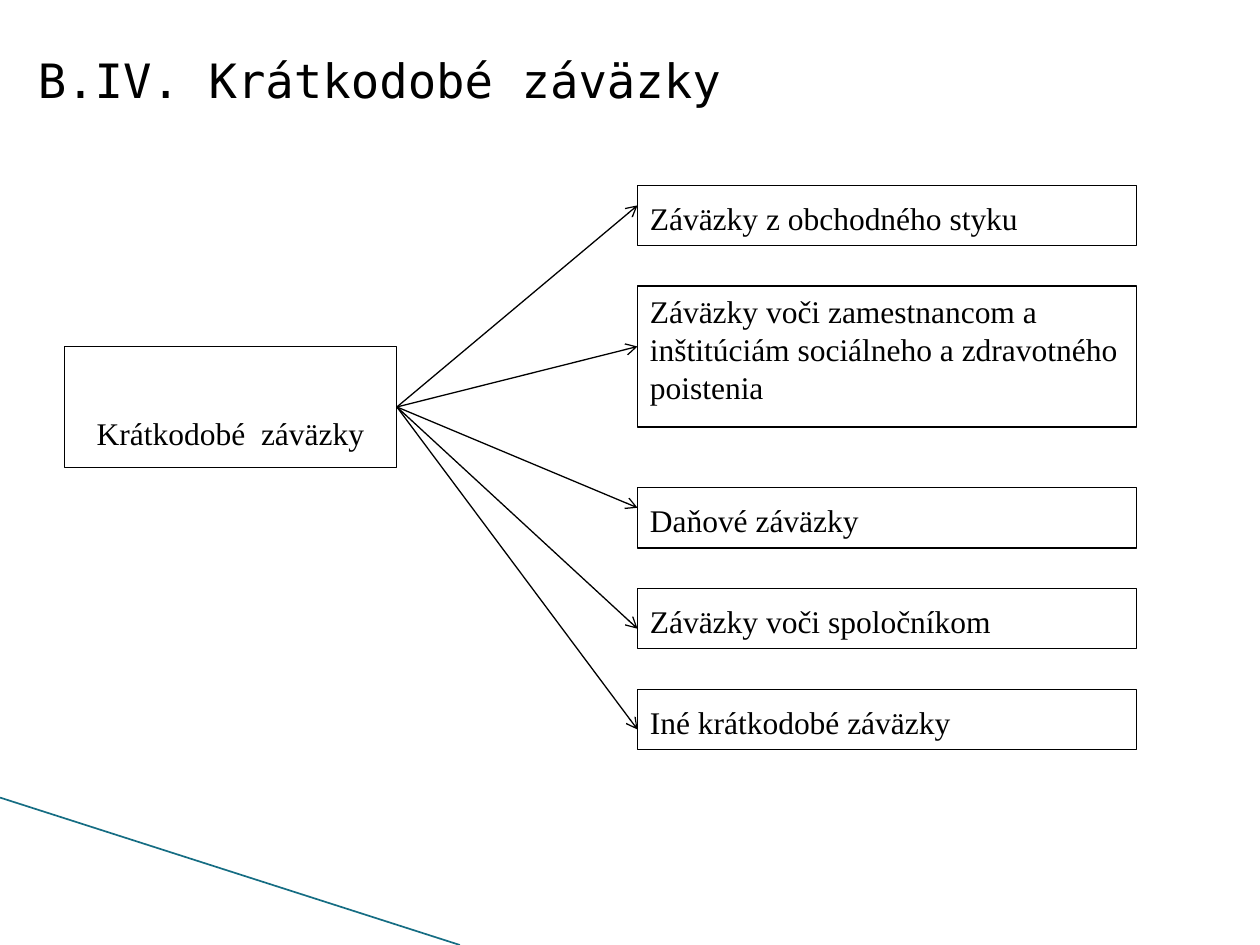
from lxml import etree
from pptx import Presentation
from pptx import util as u
from pptx.dml.color import RGBColor
from pptx.enum import shapes, text
from pptx.oxml.ns import qn

TITLE = "B.IV. Krátkodobé záväzky"
SOURCE = "Krátkodobé  záväzky"
# label, first row, rows high, row the arrow points at
LIABILITIES = [
    ("Záväzky z\u00a0obchodného styku", 0, 3, 1),
    ("Záväzky voči zamestnancom a inštitúciám sociálneho a zdravotného poistenia", 5, 7, 8),
    ("Daňové záväzky", 15, 3, 16),
    ("Záväzky voči spoločníkom", 20, 3, 22),
    ("Iné krátkodobé záväzky", 25, 3, 27),
]
COLORS = {"ink": "000000", "paper": "FFFFFF", "accent": "156D83"}
TITLE_FONT, BOX_FONT = "DejaVu Sans Mono", "Times New Roman"
GRID_TOP, ROW = 1.47, 0.16
SOURCE_LEFT, SOURCE_WIDTH = 0.51, 2.64
LIST_LEFT, LIST_WIDTH = 5.06, 3.96


def color(name):
    return RGBColor.from_string(COLORS[name])


def row_y(row):
    return u.Inches(GRID_TOP + row * ROW)


def style_font(paragraph, name, size):
    font = paragraph.runs[0].font
    font.name, font.size, font.bold = name, u.Pt(size), False
    font.color.rgb = color("ink")


def add_box(slide, label, left, width, row, rows, spacing=1.2):
    box = slide.shapes.add_shape(
        shapes.MSO_SHAPE.RECTANGLE, u.Inches(left), row_y(row),
        u.Inches(width), u.Inches(rows * ROW))
    box.shadow.inherit = False
    box.fill.solid()
    box.fill.fore_color.rgb = color("paper")
    box.line.color.rgb = color("ink")
    box.line.width = u.Pt(0.75)
    frame = box.text_frame
    frame.word_wrap = True
    frame.vertical_anchor = text.MSO_ANCHOR.TOP
    frame.text = label
    paragraph = frame.paragraphs[0]
    paragraph.alignment = text.PP_ALIGN.LEFT
    paragraph.line_spacing = spacing
    style_font(paragraph, BOX_FONT, 18)
    return box


def add_line(slide, start, end, line_color, width):
    line = slide.shapes.add_connector(shapes.MSO_CONNECTOR.STRAIGHT, *start, *end)
    line.line.color.rgb = color(line_color)
    line.line.width = u.Pt(width)
    etree.SubElement(line._element.spPr, qn("a:effectLst"))
    return line


def main():
    prs = Presentation()
    prs.slide_width, prs.slide_height = u.Inches(10), u.Inches(7.5)
    slide = prs.slides.add_slide(prs.slide_layouts[5])

    add_line(slide, (0, u.Inches(6.33)), (u.Inches(3.65), prs.slide_height), "accent", 0.95)

    title = slide.shapes.title
    title.left, title.top = u.Inches(0.2), u.Inches(0.36)
    title.width, title.height = u.Inches(9.3), u.Inches(6.34)
    title.text_frame.text = TITLE
    title.text_frame.vertical_anchor = text.MSO_ANCHOR.TOP
    heading = title.text_frame.paragraphs[0]
    heading.alignment = text.PP_ALIGN.LEFT
    style_font(heading, TITLE_FONT, 27)

    source = add_box(slide, SOURCE, SOURCE_LEFT, SOURCE_WIDTH, 8, 6)
    source.text_frame.margin_top = u.Inches(0.48)
    source.text_frame.paragraphs[0].alignment = text.PP_ALIGN.CENTER
    fan_start = (source.left + source.width, source.top + source.height // 2)

    for label, row, rows, target_row in LIABILITIES:
        add_box(slide, label, LIST_LEFT, LIST_WIDTH, row, rows, 1.2 if rows == 3 else 1.0)
        arrow = add_line(slide, fan_start, (u.Inches(LIST_LEFT), row_y(target_row)), "ink", 0.75)
        arrow.begin_connect(source, 3)
        etree.SubElement(arrow.line._get_or_add_ln(), qn("a:tailEnd"), type="arrow")

    prs.save("out.pptx")


if __name__ == "__main__":
    main()
